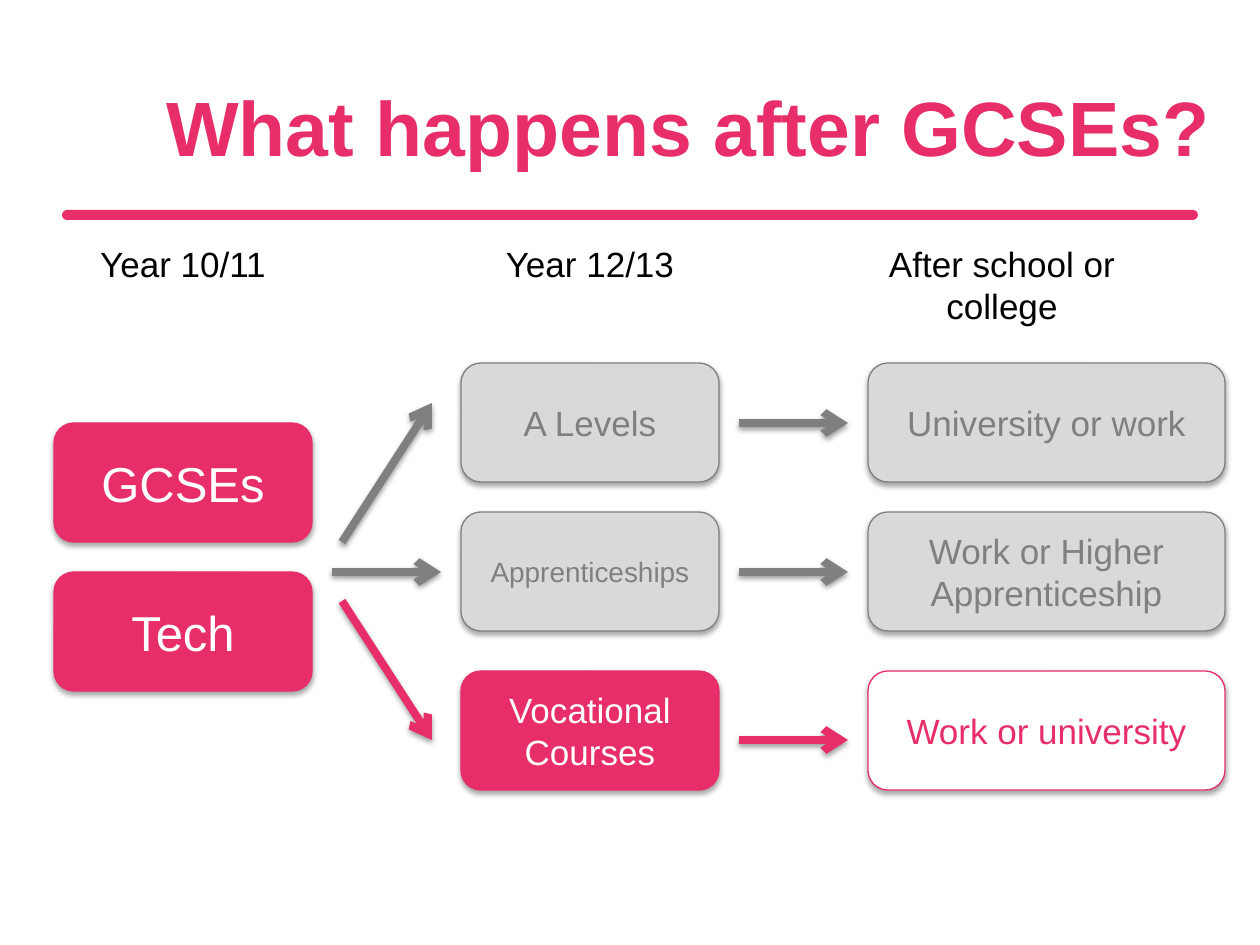
"""Build the slide that shows the routes open to pupils after GCSEs."""
from dataclasses import dataclass
from typing import Any

import lxml.etree
import pptx
import pptx.dml.color
import pptx.enum.shapes
import pptx.enum.text
import pptx.oxml.ns
import pptx.util

EMU_PER_PX = 914400 / 126
ANCHOR = pptx.enum.text.MSO_ANCHOR
ALIGN = pptx.enum.text.PP_ALIGN
ROUNDED = pptx.enum.shapes.MSO_SHAPE.ROUNDED_RECTANGLE


@dataclass(frozen=True)
class Theme:
    font: str = "Arial"
    pink: str = "E72E68"
    grey: str = "7F7F7F"
    mid_grey: str = "808080"
    pale: str = "D9D9D9"
    white: str = "FFFFFF"
    black: str = "000000"
    title: int = 44
    start: int = 28
    body: int = 20
    small: int = 16
    outline: float = 0.75
    arrow: float = 4.5


THEME = Theme()


@dataclass(frozen=True)
class Card:
    text: str
    left: int
    top: int
    width: int
    fill: str
    line: str
    color: str
    size: int = THEME.body


@dataclass(frozen=True)
class Arrow:
    start: tuple[int, int]
    end: tuple[int, int]
    color: str


@dataclass(frozen=True)
class Heading:
    text: str
    left: int
    width: int
    height: int
    wrap: bool = True


START_X, COURSE_X, NEXT_X = 54, 461, 868
NARROW, WIDE, CARD_HEIGHT = 258, 357, 119
A_LEVEL_Y, APPRENTICE_Y, VOCATIONAL_Y = 363, 512, 671
GCSE_Y, TECH_Y = 423, 572
HEADING_Y = 236
GREY = (THEME.pale, THEME.grey, THEME.grey)
MID_GREY = (THEME.pale, THEME.mid_grey, THEME.mid_grey)
PINK = (THEME.pink, THEME.pink, THEME.white)
OUTLINED = (THEME.white, THEME.pink, THEME.pink)

CARDS = [
    Card("GCSEs", START_X, GCSE_Y, NARROW, *PINK, THEME.start),
    Card("Tech", START_X, TECH_Y, NARROW, *PINK, THEME.start),
    Card("A Levels", COURSE_X, A_LEVEL_Y, NARROW, *GREY),
    Card("Apprenticeships", COURSE_X, APPRENTICE_Y, NARROW, *MID_GREY, THEME.small),
    Card("Vocational Courses", COURSE_X, VOCATIONAL_Y, NARROW, *PINK),
    Card("University or work", NEXT_X, A_LEVEL_Y, WIDE, *GREY),
    Card("Work or Higher Apprenticeship", NEXT_X, APPRENTICE_Y, WIDE, *MID_GREY),
    Card("Work or university", NEXT_X, VOCATIONAL_Y, WIDE, *OUTLINED),
]
ARROWS = [
    Arrow((342, 542), (432, 403), THEME.grey),
    Arrow((332, 572), (441, 572), THEME.mid_grey),
    Arrow((342, 601), (432, 740), THEME.pink),
    Arrow((739, 423), (848, 423), THEME.grey),
    Arrow((739, 572), (848, 572), THEME.mid_grey),
    Arrow((739, 740), (848, 740), THEME.pink),
]
HEADINGS = [
    Heading("Year 10/11", START_X, NARROW, 55),
    Heading("Year 12/13", COURSE_X, NARROW, 55),
    Heading("After school or\ncollege", 874, 256, 97, wrap=False),
]


def px(*lengths: int) -> list[pptx.util.Emu]:
    return [pptx.util.Emu(round(length * EMU_PER_PX)) for length in lengths]


def rgb(color: str) -> pptx.dml.color.RGBColor:
    return pptx.dml.color.RGBColor.from_string(color)


def write(box: Any, text: str, *, size: int, color: str, bold: bool = False,
          align: ALIGN = ALIGN.CENTER, anchor: ANCHOR = ANCHOR.MIDDLE,
          wrap: bool = True, grow: bool = False) -> None:
    frame = box.text_frame
    frame.word_wrap = wrap
    frame.vertical_anchor = anchor
    if grow:
        frame.auto_size = pptx.enum.text.MSO_AUTO_SIZE.SHAPE_TO_FIT_TEXT
    frame.text = text
    for para in frame.paragraphs:
        para.alignment = align
        for span in para.runs:
            span.font.name = THEME.font
            span.font.size = pptx.util.Pt(size)
            span.font.bold = bold
            span.font.color.rgb = rgb(color)


def add_child(parent: Any, tag: str, **attributes: str) -> Any:
    return lxml.etree.SubElement(parent, pptx.oxml.ns.qn(tag), attributes)


def add_shadow(shape: Any, *, distance: int, opacity: int) -> None:
    effects = add_child(shape._element.spPr, "a:effectLst")
    shadow = add_child(effects, "a:outerShdw", blurRad="40000", dist=str(distance),
                       dir="5400000", rotWithShape="0")
    color = add_child(shadow, "a:srgbClr", val=THEME.black)
    add_child(color, "a:alpha", val=str(opacity * 1000))


def draw_rule(page: Any) -> None:
    rule = page.shapes.add_shape(ROUNDED, *px(62, 210, 1136, 10))
    rule.adjustments[0] = 0.5
    rule.fill.solid()
    rule.fill.fore_color.rgb = rgb(THEME.pink)
    rule.line.fill.background()
    rule.shadow.inherit = False


def draw_title(page: Any) -> None:
    box = page.shapes.add_textbox(*px(154, 47, 1106, 157))
    write(box, "What happens after GCSEs?", size=THEME.title, color=THEME.pink,
          bold=True, align=ALIGN.LEFT)


def draw_card(page: Any, card: Card) -> None:
    box = page.shapes.add_shape(ROUNDED, *px(card.left, card.top, card.width, CARD_HEIGHT))
    box.fill.solid()
    box.fill.fore_color.rgb = rgb(card.fill)
    box.line.color.rgb = rgb(card.line)
    box.line.width = pptx.util.Pt(THEME.outline)
    add_shadow(box, distance=23000, opacity=35)
    write(box, card.text, size=card.size, color=card.color)


def draw_arrow(page: Any, arrow: Arrow) -> None:
    straight = pptx.enum.shapes.MSO_CONNECTOR.STRAIGHT
    connector = page.shapes.add_connector(straight, *px(*arrow.start, *arrow.end))
    connector.line.color.rgb = rgb(arrow.color)
    connector.line.width = pptx.util.Pt(THEME.arrow)
    add_child(connector.line._get_or_add_ln(), "a:tailEnd", type="arrow")
    add_shadow(connector, distance=20000, opacity=38)


def draw_heading(page: Any, heading: Heading) -> None:
    box = page.shapes.add_textbox(*px(heading.left, HEADING_Y, heading.width, heading.height))
    write(box, heading.text, size=THEME.body, color=THEME.black, anchor=ANCHOR.TOP,
          wrap=heading.wrap, grow=True)


def main() -> None:
    deck = pptx.Presentation()
    deck.slide_width, deck.slide_height = px(1260, 945)
    page = deck.slides.add_slide(deck.slide_layouts[6])
    draw_rule(page)
    draw_title(page)
    for card in CARDS:
        draw_card(page, card)
    for arrow in ARROWS:
        draw_arrow(page, arrow)
    for heading in HEADINGS:
        draw_heading(page, heading)
    deck.save("out.pptx")


if __name__ == "__main__":
    main()
